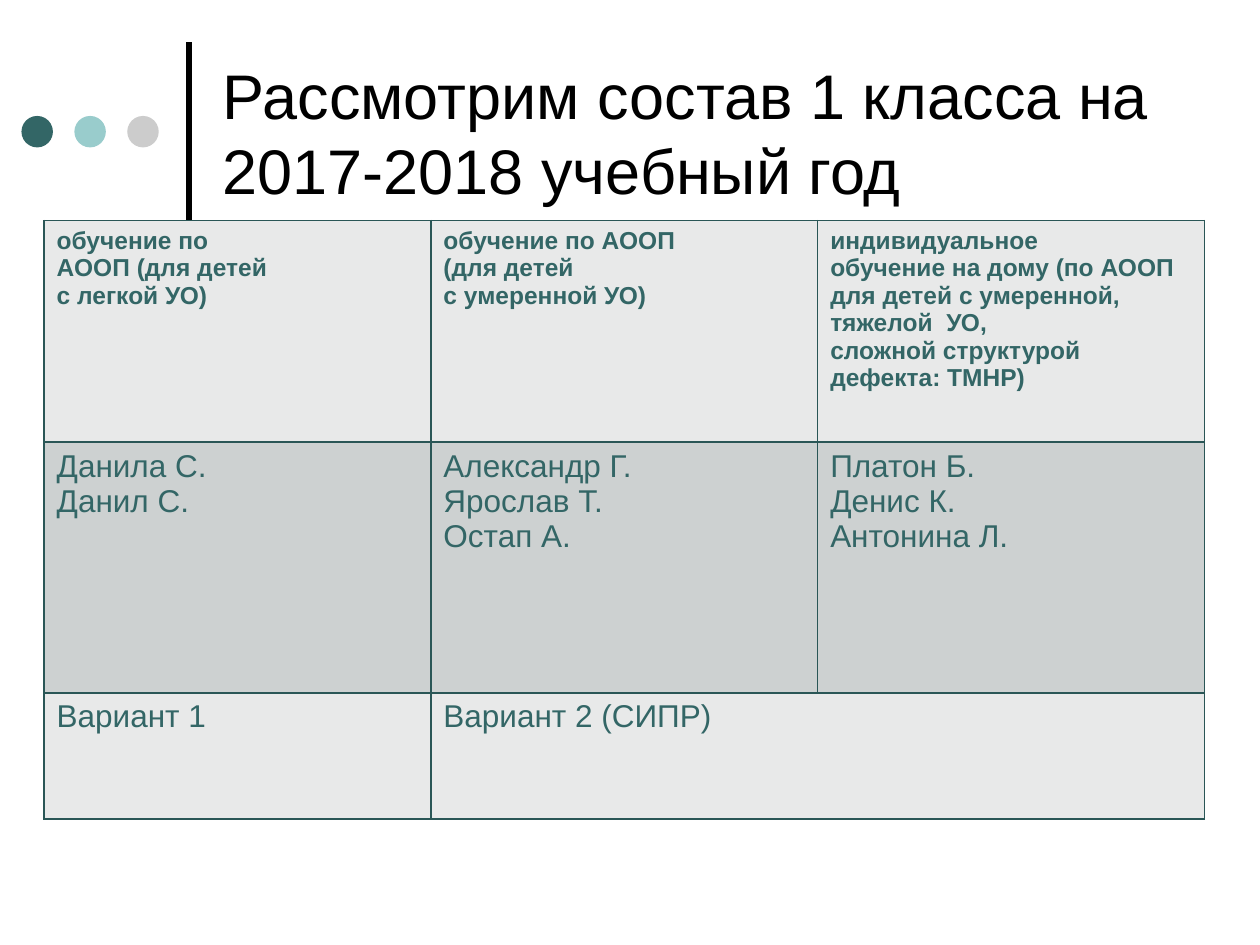
from lxml.etree import SubElement
from pptx import Presentation
from pptx.dml.color import RGBColor
from pptx.enum.shapes import MSO_CONNECTOR, MSO_SHAPE
from pptx.enum.text import MSO_ANCHOR
from pptx.oxml.ns import qn
from pptx.util import Inches, Pt

TEAL = "336666"
BORDER = "2A5656"
HEADER_FORMAT = {"name": "Arial", "size": Pt(14), "bold": True}
BODY_FORMAT = {"name": "Arial", "size": Pt(18), "bold": False}
TITLE_FORMAT = {"name": "Arial", "size": Pt(36), "bold": False}

# Each row: height, fill, text format, cell texts
ROWS = [
    (1.76, "E8E9E9", HEADER_FORMAT, [
        ["обучение по", "АООП (для детей", "с легкой УО)"],
        ["обучение по АООП", "(для детей", "с умеренной УО)"],
        ["индивидуальное", "обучение на дому (по АООП",
         "для детей с умеренной, тяжелой  УО,",
         "сложной структурой дефекта: ТМНР)"],
    ]),
    (1.99, "CDD1D1", BODY_FORMAT, [
        ["Данила С.", "Данил С."],
        ["Александр Г.", "Ярослав Т.", "Остап А."],
        ["Платон Б.", "Денис К.", "Антонина Л."],
    ]),
    (1.0, "E8E9E9", BODY_FORMAT, [["Вариант 1"], ["Вариант 2 (СИПР)"], []]),
]


def color(value):
    return RGBColor.from_string(value)


def write_lines(text_frame, lines, text_format, text_color):
    for index, line in enumerate(lines):
        paragraph = text_frame.paragraphs[0] if index == 0 else text_frame.add_paragraph()
        run = paragraph.add_run()
        run.text = line
        for name, value in text_format.items():
            setattr(run.font, name, value)
        run.font.color.rgb = color(text_color)


def add_borders(cell):
    properties = cell._tc.get_or_add_tcPr()
    for position, side in enumerate(("a:lnL", "a:lnR", "a:lnT", "a:lnB")):
        line = properties.makeelement(qn(side), {"w": str(Pt(1))})
        fill = SubElement(line, qn("a:solidFill"))
        SubElement(fill, qn("a:srgbClr"), val=BORDER)
        properties.insert(position, line)


def add_decoration(slide, left, top, width, height):
    # Vertical rule on the right edge
    rule = slide.shapes.add_connector(
        MSO_CONNECTOR.STRAIGHT, Inches(left + width), Inches(top + height),
        Inches(left + width), Inches(top))
    rule.line.color.rgb = color("000000")
    rule.line.width = Pt(3)
    SubElement(rule._element.spPr, qn("a:effectLst"))

    # Three evenly spaced dots
    diameter, step = 0.25, 0.42
    for index, fill in enumerate((TEAL, "99CCCC", "CCCCCC")):
        dot = slide.shapes.add_shape(
            MSO_SHAPE.OVAL, Inches(left + index * step), Inches(top + 0.59),
            Inches(diameter), Inches(diameter))
        dot.shadow.inherit = False
        dot.fill.solid()
        dot.fill.fore_color.rgb = color(fill)
        dot.line.fill.background()


def add_title(slide, left, top, width, height):
    title = slide.shapes.add_textbox(Inches(left), Inches(top), Inches(width), Inches(height))
    title.text_frame.word_wrap = True
    title.text_frame.vertical_anchor = MSO_ANCHOR.MIDDLE
    write_lines(title.text_frame, ["Рассмотрим состав 1 класса на 2017-2018 учебный год"],
                TITLE_FORMAT, "000000")


def add_class_table(slide, left, top, width, height):
    table = slide.shapes.add_table(
        len(ROWS), 3, Inches(left), Inches(top), Inches(width), Inches(height)).table
    for column in table.columns:
        column.width = Inches(width / 3)
    for row_index, (row_height, fill, text_format, texts) in enumerate(ROWS):
        table.rows[row_index].height = Inches(row_height)
        for column_index, lines in enumerate(texts):
            cell = table.cell(row_index, column_index)
            cell.fill.solid()
            cell.fill.fore_color.rgb = color(fill)
            add_borders(cell)
            write_lines(cell.text_frame, lines, text_format, TEAL)
    # The second variant covers the last two columns
    table.cell(2, 1).merge(table.cell(2, 2))


def main():
    presentation = Presentation()
    presentation.slide_width = Inches(10)
    presentation.slide_height = Inches(7.5)
    slide = presentation.slides.add_slide(presentation.slide_layouts[6])
    add_decoration(slide, 0.17, 0.33, 1.33, 1.42)
    add_title(slide, 1.67, 0.21, 7.67, 1.67)
    add_class_table(slide, 0.35, 1.75, 9.21, 4.75)
    presentation.save("out.pptx")


if __name__ == "__main__":
    main()
